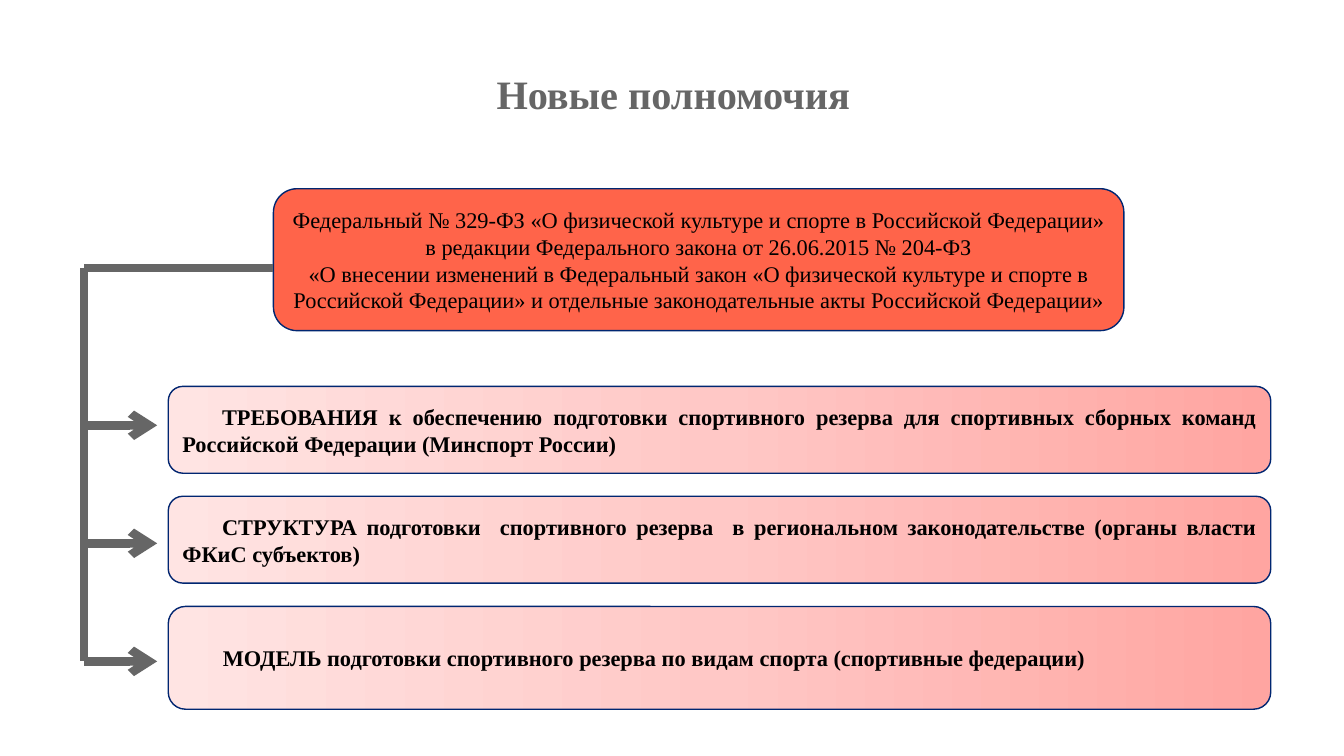
"""Builds the slide on new powers in sports reserve training."""
from copy import deepcopy

from lxml.etree import SubElement
from pptx import Presentation
from pptx.dml.color import RGBColor
from pptx.enum.shapes import MSO_CONNECTOR as CONNECTOR, MSO_SHAPE as SHAPE
from pptx.enum.text import MSO_ANCHOR as ANCHOR, PP_ALIGN as ALIGN
from pptx.oxml.ns import qn
from pptx.util import Pt

FONT = "Times New Roman"
COLORS = {
    "law": "FF4121",
    "deep": "FFA5A1",
    "middle": "FFC8C6",
    "pale": "FFE4E3",
    "border": "002671",
    "gray": "666666",
    "text": "000000",
}
LAW = [
    "Федеральный № 329-ФЗ «О физической культуре и спорте в Российской Федерации» "
    "в редакции Федерального закона от 26.06.2015 № 204-ФЗ",
    "«О внесении изменений в Федеральный закон «О физической культуре и спорте в "
    "Российской Федерации» и отдельные законодательные акты Российской Федерации»",
]
POWERS = [
    (276, 62, "ТРЕБОВАНИЯ к обеспечению подготовки спортивного резерва для "
     "спортивных сборных команд Российской Федерации (Минспорт России)"),
    (354.5, 62, "СТРУКТУРА подготовки  спортивного резерва  в региональном "
     "законодательстве (органы власти ФКиС субъектов)"),
    (433.2, 73.4, "МОДЕЛЬ подготовки спортивного резерва по видам спорта "
     "(спортивные федерации)"),
]
TRUNK_LEFT, TRUNK_TOP = 60, 191.5
ARROW_TOP, ARROW_STEP, ARROW_TIP = 303.8, 84.3, 112.3
LAW_LEFT = 195.3


def color(name):
    return RGBColor.from_string(COLORS[name])


def write(shape, texts, align, size=16, bold=False, ink="text"):
    frame = shape.text_frame
    frame.word_wrap = True
    frame.vertical_anchor = ANCHOR.MIDDLE
    frame.text = "\n".join(texts)
    for paragraph in frame.paragraphs:
        paragraph.alignment = align
        font = paragraph.font
        font.name, font.size, font.bold = FONT, Pt(size), bold
        font.color.rgb = color(ink)


def add_box(slide, left, top, width, height):
    box = slide.shapes.add_shape(
        SHAPE.ROUNDED_RECTANGLE, Pt(left), Pt(top), Pt(width), Pt(height))
    box.shadow.inherit = False
    box.line.color.rgb = color("border")
    box.line.width = Pt(1)
    return box


def add_law(slide):
    box = add_box(slide, LAW_LEFT, 134.8, 607.5, 101.4)
    box.fill.solid()
    box.fill.fore_color.rgb = color("law")
    fill_color = box.fill._xPr.find(qn("a:solidFill"))[0]
    SubElement(fill_color, qn("a:alpha"), val="81000")
    write(box, LAW, ALIGN.CENTER)


def add_power(slide, top, height, text):
    box = add_box(slide, 120.2, top, 787.5, height)
    box.fill.gradient()
    stop_list = box.fill._xPr.find(qn("a:gradFill")).find(qn("a:gsLst"))
    stop_list.insert(1, deepcopy(stop_list[0]))
    for index, name in enumerate(("deep", "middle", "pale")):
        stop = box.fill.gradient_stops[index]
        stop.position = index / 2
        stop.color.rgb = color(name)
    box.fill.gradient_angle = 180
    write(box, [text], ALIGN.JUSTIFY, bold=True)
    properties = box.text_frame.paragraphs[0]._p.get_or_add_pPr()
    properties.set("indent", str(Pt(28.35)))


def add_line(slide, start, end, arrow=False):
    line = slide.shapes.add_connector(
        CONNECTOR.STRAIGHT, *(Pt(value) for value in (*start, *end)))
    line.line.color.rgb = color("gray")
    line.line.width = Pt(6)
    if arrow:
        SubElement(line.line._get_or_add_ln(), qn("a:tailEnd"), type="arrow")
    SubElement(line._element.spPr, qn("a:effectLst"))


def add_title(slide, text):
    title = slide.shapes.add_textbox(Pt(49), Pt(49), Pt(864), Pt(39.6))
    write(title, [text], ALIGN.CENTER, size=28.8, bold=True, ink="gray")
    title.text_frame.paragraphs[0].line_spacing = 0.9


def main():
    presentation = Presentation()
    presentation.slide_width, presentation.slide_height = Pt(960), Pt(540)
    slide = presentation.slides.add_slide(presentation.slide_layouts[6])
    add_law(slide)
    for power in POWERS:
        add_power(slide, *power)
    arrow_tops = [ARROW_TOP + index * ARROW_STEP for index in range(len(POWERS))]
    corner = (TRUNK_LEFT, TRUNK_TOP)
    add_line(slide, (LAW_LEFT, TRUNK_TOP), corner)
    add_line(slide, corner, (TRUNK_LEFT, arrow_tops[-1]))
    for top in arrow_tops:
        add_line(slide, (TRUNK_LEFT, top), (ARROW_TIP, top), arrow=True)
    add_title(slide, "Новые полномочия")
    presentation.save("out.pptx")


if __name__ == "__main__":
    main()
